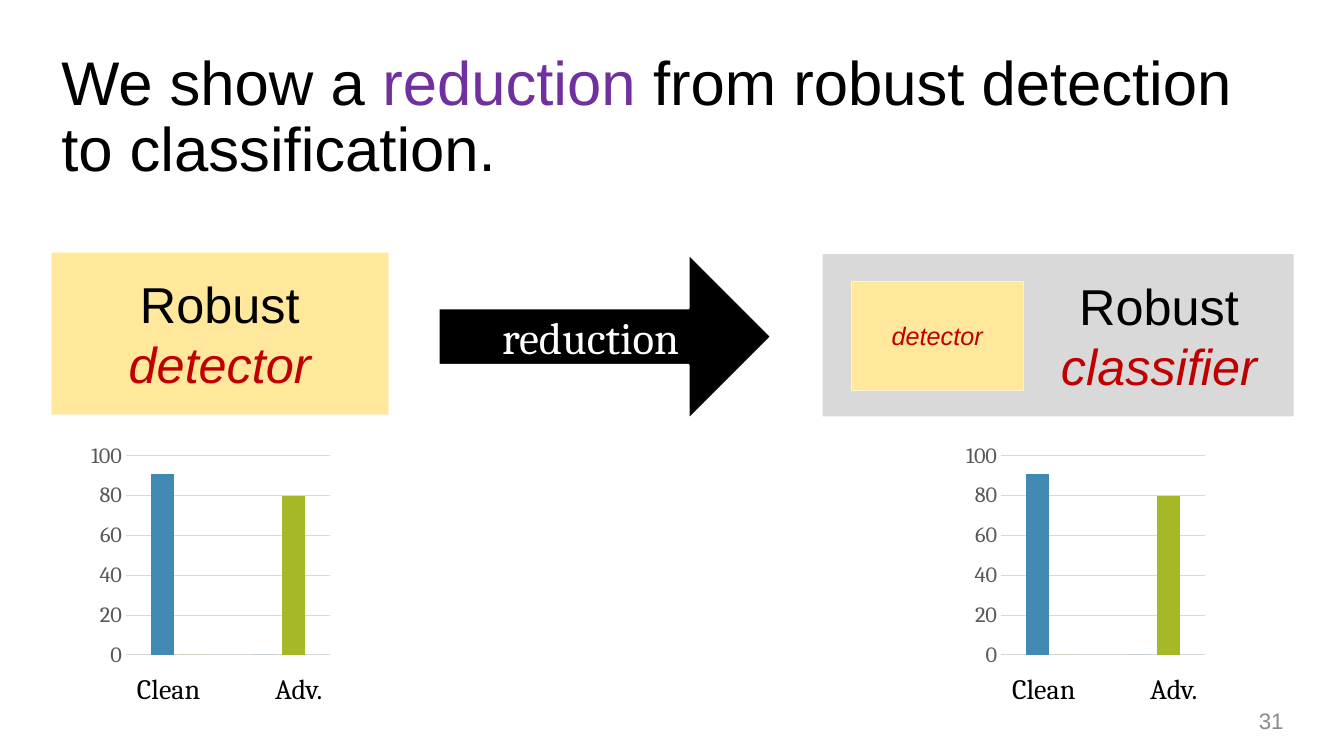
from lxml import etree
from pptx import Presentation
from pptx.chart.data import CategoryChartData
from pptx.dml.color import RGBColor
from pptx.enum.chart import XL_CHART_TYPE, XL_TICK_MARK
from pptx.enum.shapes import MSO_SHAPE
from pptx.enum.text import MSO_ANCHOR, PP_ALIGN
from pptx.oxml.ns import qn
from pptx.util import Inches, Pt

BLACK, WHITE, RED, PURPLE = "000000", "FFFFFF", "C00000", "7030A0"
YELLOW, PALE_YELLOW, GREY = "FFE79B", "FFF3CD", "D9D9D9"
SERIES = [("Series 1", (91, 0), "418AB3"), ("Series 2", (0, 80), "A6B727")]
PLOT = {"x": 0.323, "y": 0.041, "w": 0.677, "h": 0.912}


def color(value):
    """Turn a hex string into a colour."""
    return RGBColor.from_string(value)


def inches(box):
    """Turn left, top, width and height into lengths."""
    return [Inches(value) for value in box]


def style_font(font, **values):
    """Set font attributes and an optional hex colour."""
    if "hex" in values:
        font.color.rgb = color(values.pop("hex"))
    for name, value in values.items():
        setattr(font, name, value)


def write(frame, spans, size, face="Arial", align=PP_ALIGN.LEFT,
          anchor=MSO_ANCHOR.TOP, spacing=None):
    """Write one paragraph of coloured spans into a text frame."""
    frame.word_wrap = True
    frame.vertical_anchor = anchor
    para = frame.paragraphs[0]
    para.alignment, para.line_spacing = align, spacing
    for text, hex_color, italic in spans:
        span = para.add_run()
        span.text = text
        style_font(span.font, name=face, size=Pt(size), hex=hex_color, italic=italic)


def add_text(page, box, spans, size, **layout):
    """Add a wrapped text box."""
    write(page.shapes.add_textbox(*inches(box)).text_frame, spans, size, **layout)


def add_block(page, box, fill, spans, size, line=None, width=0.5,
              kind=MSO_SHAPE.RECTANGLE, face="Arial", indent=0.1):
    """Add a filled shape with centred text and return it."""
    shape = page.shapes.add_shape(kind, *inches(box))
    shape.shadow.inherit = False
    shape.fill.solid()
    shape.fill.fore_color.rgb = color(fill)
    if line:
        shape.line.color.rgb = color(line)
        shape.line.width = Pt(width)
    else:
        shape.line.fill.background()
    shape.text_frame.margin_left = Inches(indent)
    write(shape.text_frame, spans, size, face, PP_ALIGN.CENTER, MSO_ANCHOR.MIDDLE)
    return shape


def fix_plot_area(chart):
    """Give the inner plot area a fixed place in the chart."""
    area = chart.element.find(".//" + qn("c:plotArea"))
    layout = area.find(qn("c:layout"))
    if layout is None:
        layout = etree.Element(qn("c:layout"))
        area.insert(0, layout)
    manual = etree.SubElement(layout, qn("c:manualLayout"))
    settings = {"layoutTarget": "inner", "xMode": "edge", "yMode": "edge", **PLOT}
    for name, value in settings.items():
        etree.SubElement(manual, qn("c:" + name)).set("val", str(value))


def add_accuracy(page, left, top):
    """Add a column chart with its two category captions."""
    data = CategoryChartData()
    data.categories = ["1", "2"]
    for name, values, _ in SERIES:
        data.add_series(name, values)
    chart = page.shapes.add_chart(
        XL_CHART_TYPE.COLUMN_CLUSTERED, *inches((left, top, 3, 2.22)), data).chart
    chart.has_legend = chart.has_title = False
    style_font(chart.font, name="Arial", size=Pt(10), hex=BLACK)
    chart.category_axis.visible = False
    axis = chart.value_axis
    limits = {"minimum_scale": 0, "maximum_scale": 100, "major_unit": 20,
              "major_tick_mark": XL_TICK_MARK.NONE, "minor_tick_mark": XL_TICK_MARK.NONE}
    for name, value in limits.items():
        setattr(axis, name, value)
    axis.format.line.fill.background()
    style_font(axis.tick_labels.font, name="Cambria", size=Pt(16), hex="595959")
    grid = axis.major_gridlines.format.line
    grid.color.rgb, grid.width = color(GREY), Pt(0.75)
    plot = chart.plots[0]
    plot.gap_width, plot.overlap, plot.vary_by_categories = 219, -27, False
    for series, (_, _, hex_color) in zip(plot.series, SERIES):
        series.format.fill.solid()
        series.format.fill.fore_color.rgb = color(hex_color)
    fix_plot_area(chart)
    for index, caption in enumerate(("Clean", "Adv.")):
        add_text(page, (left + 0.98 + 1.37 * index, top + 2.21, 1.24, 0.44),
                 [(caption, BLACK, False)], 20, face="Cambria")


def add_detector(page, left, top):
    """Add the detector block with its chart below."""
    add_block(page, (left, top, 3.34, 1.61), YELLOW,
              [("Robust ", BLACK, False), ("detector", RED, True)], 36, PALE_YELLOW)
    add_accuracy(page, left - 0.23, top + 1.9)


def add_classifier(page, left, top):
    """Add the classifier block holding a detector, with its chart below."""
    add_block(page, (left, top, 4.67, 1.61), GREY,
              [("Robust ", BLACK, False), ("classifier", RED, True)], 36, indent=2.1)
    add_block(page, (left + 0.28, top + 0.27, 1.71, 1.08), YELLOW,
              [("detector", RED, True)], 18, PALE_YELLOW)
    add_accuracy(page, left + 0.8, top + 1.88)


def add_reduction_arrow(page, box):
    """Add the arrow from detector to classifier."""
    arrow = add_block(page, box, BLACK, [("reduction", WHITE, False)], 32, WHITE, 1.5,
                      MSO_SHAPE.RIGHT_ARROW, "Cambria")
    arrow.adjustments[0], arrow.adjustments[1] = 0.343, 0.5


def main():
    """Build and save the slide."""
    deck = Presentation()
    deck.slide_width, deck.slide_height = Inches(13.33), Inches(7.5)
    page = deck.slides.add_slide(deck.slide_layouts[6])
    title = [("We show a ", BLACK, False), ("reduction", PURPLE, False),
             (" from robust detection to classification.", BLACK, False)]
    add_text(page, (0.51, 0.45, 11.97, 1.45), title, 44,
             anchor=MSO_ANCHOR.MIDDLE, spacing=0.9)
    add_text(page, (9.83, 6.95, 3, 0.4), [("31", "8C8C8C", False)], 16,
             align=PP_ALIGN.RIGHT, anchor=MSO_ANCHOR.MIDDLE)
    add_reduction_arrow(page, (4.35, 2.52, 3.3, 1.64))
    add_detector(page, 0.51, 2.5)
    add_classifier(page, 8.16, 2.52)
    deck.save("out.pptx")


if __name__ == "__main__":
    main()
